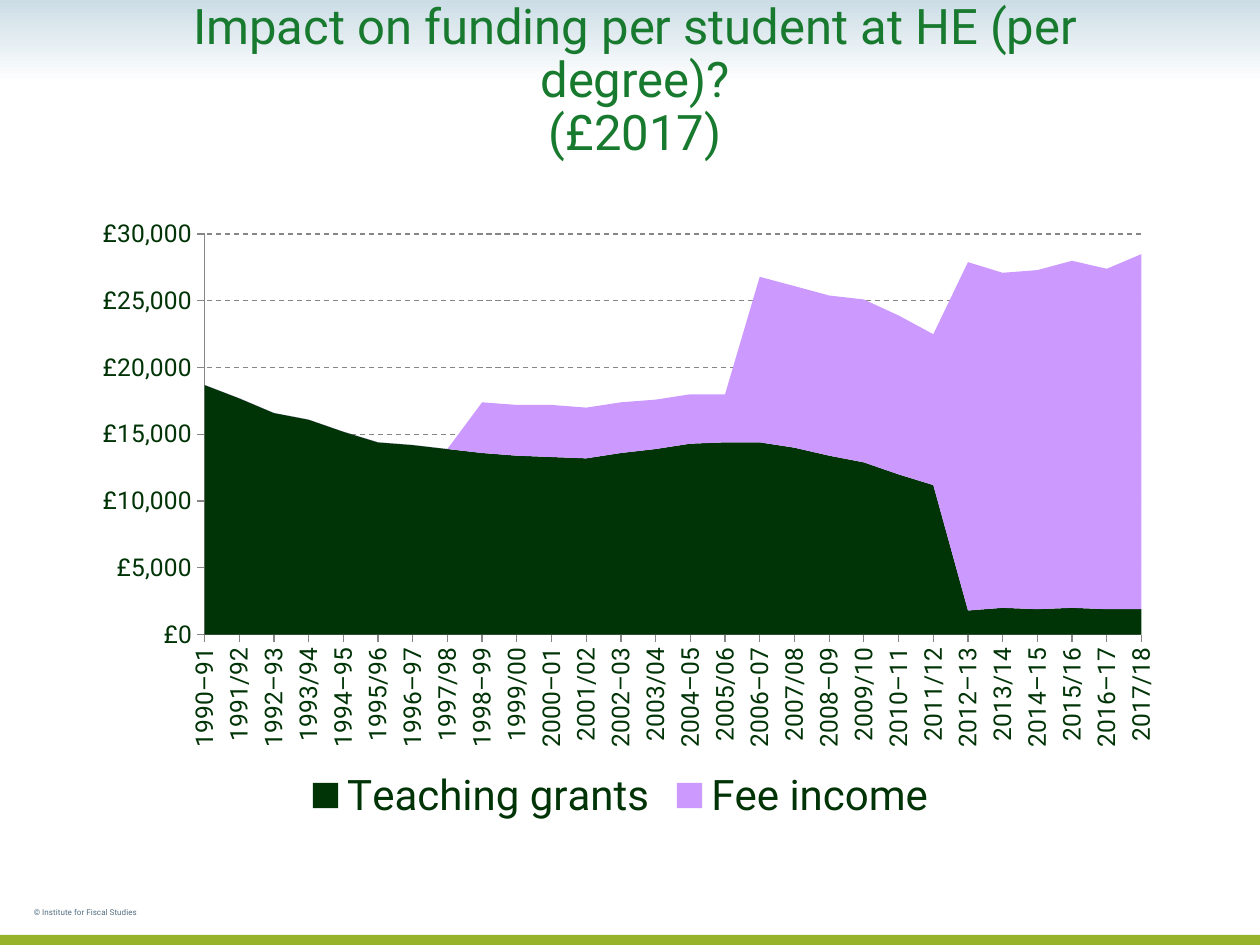
from pptx import Presentation
from pptx.chart.data import CategoryChartData
from pptx.dml.color import RGBColor
from pptx.enum.chart import XL_CHART_TYPE, XL_LEGEND_POSITION, XL_TICK_MARK
from pptx.enum.dml import MSO_LINE
from pptx.enum.shapes import MSO_SHAPE
from pptx.enum.text import MSO_ANCHOR, PP_ALIGN
from pptx.oxml import parse_xml
from pptx.oxml.ns import nsdecls, qn
from pptx.util import Inches, Pt

AREA = XL_CHART_TYPE.AREA_STACKED
BOTTOM = XL_LEGEND_POSITION.BOTTOM
OUT = XL_TICK_MARK.OUTSIDE
NO_TICK = XL_TICK_MARK.NONE
DASH = MSO_LINE.DASH
RECT = MSO_SHAPE.RECTANGLE
TOP, BASE = MSO_ANCHOR.TOP, MSO_ANCHOR.BOTTOM
LEFT, CENTER = PP_ALIGN.LEFT, PP_ALIGN.CENTER

TITLE = "Impact on funding per student at HE (per degree)?\v(£2017)"
CREDIT = "© Institute for Fiscal Studies"
FIRST, LAST = 1990, 2017
SERIES = [
    ("Teaching grants", "grant",
     [18700, 17700, 16600, 16100, 15200, 14400, 14200, 13900, 13600, 13400,
      13300, 13200, 13600, 13900, 14300, 14400, 14400, 14000, 13400, 12900,
      12000, 11200, 1800, 2000, 1900, 2000, 1900, 1900]),
    ("Fee income", "fee",
     [0, 0, 0, 0, 0, 0, 0, 0, 3800, 3800, 3900, 3800, 3800, 3700, 3700, 3600,
      12400, 12100, 12000, 12200, 11900, 11300, 26100, 25100, 25400, 26000,
      25500, 26600]),
]
PLOT = {"x": 0.112, "y": 0.048, "w": 0.874, "h": 0.641}

THEME = {
    "font": "Roboto",
    "color": {"title": "187A2E", "credit": "526D7F", "text": "003306",
              "grant": "003306", "fee": "CC99FF", "axis": "868686",
              "sky": "CCDDE6", "white": "FFFFFF", "foot": "97B32C"},
    "size": {"title": 28, "credit": 8, "chart": 10, "axis": 14, "legend": 24},
}


def tint(name):
    return RGBColor.from_string(THEME["color"][name])


def style(font, size, color="text"):
    font.name = THEME["font"]
    font.size = Pt(THEME["size"][size])
    font.bold = False
    font.color.rgb = tint(color)


def add_text(slide, text, box, role, align=LEFT, anchor=TOP, line=None, shift=None):
    """Add a text box; shift moves the baseline, in thousandths of a percent."""
    frame = slide.shapes.add_textbox(*map(Inches, box)).text_frame
    frame.word_wrap = True
    frame.vertical_anchor = anchor
    para = frame.paragraphs[0]
    para.text = text
    para.alignment = align
    para.line_spacing = line
    for run in para.runs:
        style(run.font, role, role)
        if shift:
            run.font._element.set("baseline", str(shift))


def add_band(slide, box, color, fade=None):
    band = slide.shapes.add_shape(RECT, *map(Inches, box))
    band.shadow.inherit = False
    band.line.fill.background()
    if fade is None:
        band.fill.solid()
        band.fill.fore_color.rgb = tint(color)
        return
    band.fill.gradient()
    band.fill.gradient_angle = 270
    for stop, name, place in zip(band.fill.gradient_stops, (color, fade), (0, 1)):
        stop.color.rgb = tint(name)
        stop.position = place


def place_plot(chart):
    """Fix the inner plot area as fractions of the chart."""
    area = chart._chartSpace.chart.plotArea
    for old in area.findall(qn("c:layout")):
        area.remove(old)
    modes = "".join(f'<c:{k}Mode val="edge"/>' for k in "xy")
    sizes = "".join(f'<c:{k} val="{v}"/>' for k, v in PLOT.items())
    area.insert(0, parse_xml(
        f'<c:layout {nsdecls("c")}><c:manualLayout><c:layoutTarget val="inner"/>'
        f'{modes}{sizes}</c:manualLayout></c:layout>'))


def add_funds(slide, box):
    data = CategoryChartData(number_format='"£"#,##0')
    data.categories = [f"{year}{'/' if year % 2 else '–'}{(year + 1) % 100:02}"
                       for year in range(FIRST, LAST + 1)]
    for name, _, vals in SERIES:
        data.add_series(name, vals)
    chart = slide.shapes.add_chart(AREA, *map(Inches, box), data).chart
    chart.has_title = False
    style(chart.font, "chart")
    chart.plots[0].vary_by_categories = False
    for series, (_, color, _) in zip(chart.plots[0].series, SERIES):
        series.format.fill.solid()
        series.format.fill.fore_color.rgb = tint(color)
        series.format.line.fill.background()

    cats, vals = chart.category_axis, chart.value_axis
    for axis in (cats, vals):
        axis.major_tick_mark = OUT
        axis.minor_tick_mark = NO_TICK
        axis.format.line.color.rgb = tint("axis")
        axis.format.line.width = Pt(0.75)
        style(axis.tick_labels.font, "axis")
    cats.has_major_gridlines = False
    cats.tick_labels.font._element.getparent().getparent().getparent().find(
        qn("a:bodyPr")).set("rot", "-5400000")
    vals.minimum_scale, vals.maximum_scale, vals.major_unit = 0, 30000, 5000
    vals.tick_labels.number_format = '"£"#,##0'
    vals.tick_labels.number_format_is_linked = False
    grid = vals.major_gridlines.format.line
    grid.color.rgb = tint("axis")
    grid.width = Pt(0.75)
    grid.dash_style = DASH
    vals._element.find(qn("c:crossBetween")).set("val", "midCat")

    chart.has_legend = True
    chart.legend.position = BOTTOM
    chart.legend.include_in_layout = False
    style(chart.legend.font, "legend")
    place_plot(chart)


def main():
    deck = Presentation()
    deck.slide_width, deck.slide_height = Inches(10), Inches(7.5)
    slide = deck.slides.add_slide(deck.slide_layouts[6])
    add_band(slide, (0, 0, 10, 0.67), "sky", fade="white")
    add_band(slide, (0, 7.42, 10, 0.08), "foot")
    add_text(slide, TITLE, (0.67, 0.25, 8.74, 1.08), "title",
             align=CENTER, anchor=BASE, line=0.9)
    add_text(slide, CREDIT, (0.17, 7.08, 2.75, 0.25), "credit", shift=-25000)
    add_funds(slide, (0.67, 1.62, 8.51, 4.96))
    deck.save("out.pptx")


if __name__ == "__main__":
    main()
